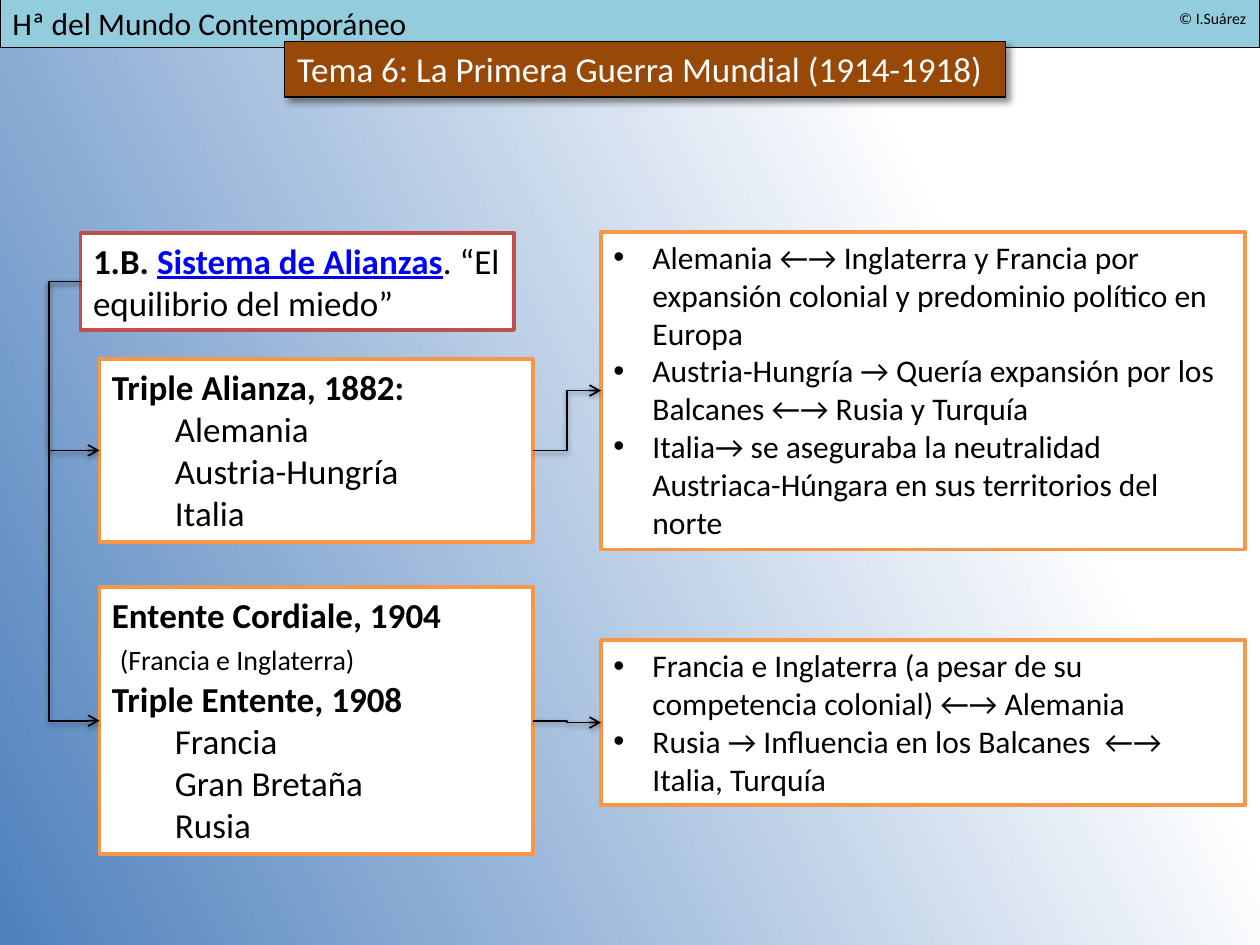
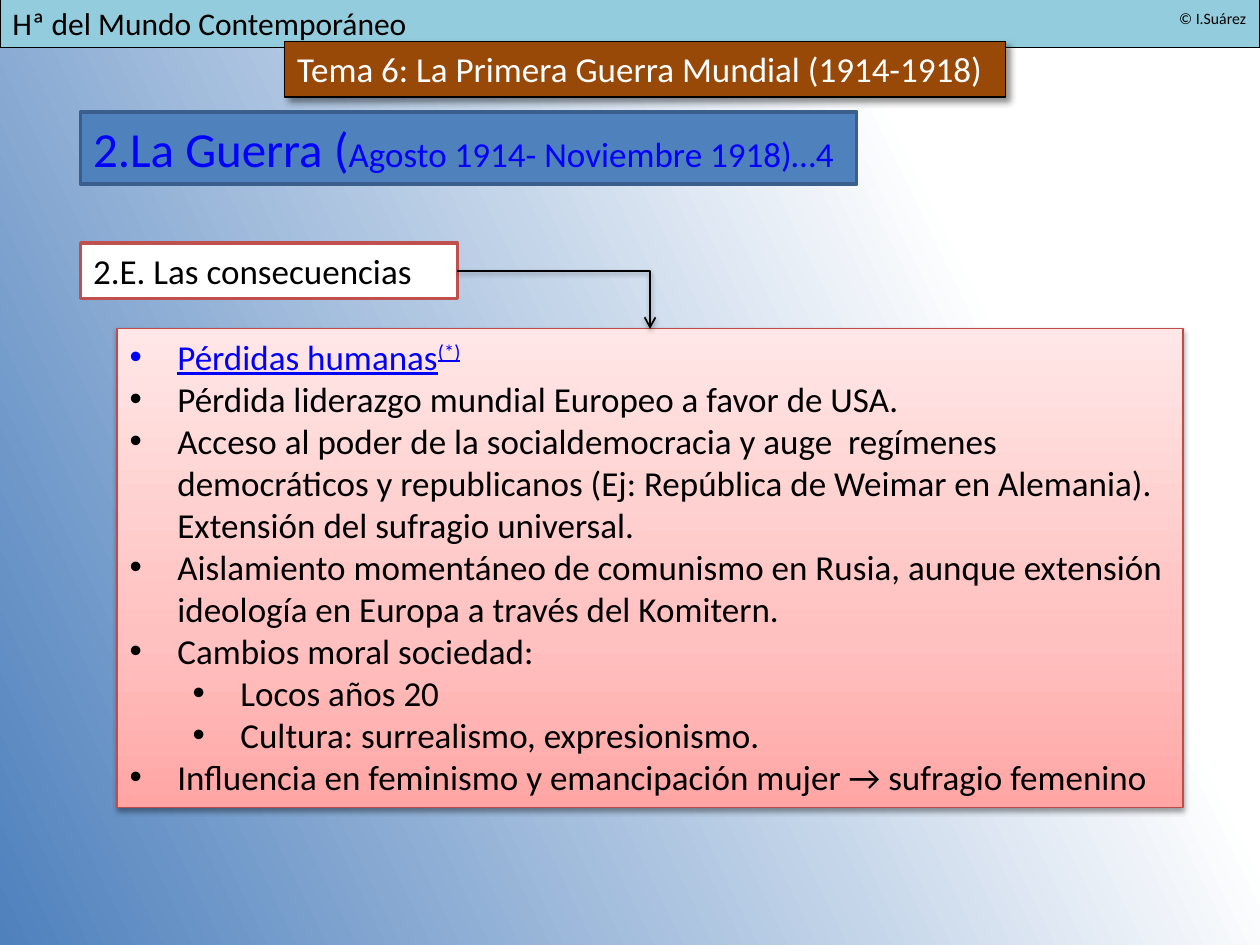
from lxml.etree import SubElement
from pptx import Presentation
from pptx.dml.color import RGBColor
from pptx.enum.shapes import MSO_CONNECTOR, MSO_SHAPE
from pptx.enum.text import MSO_ANCHOR, MSO_AUTO_SIZE, PP_ALIGN
from pptx.oxml.ns import qn
from pptx.util import Pt

PX = 9144
BLACK, WHITE, BLUE = "000000", "FFFFFF", "0000FF"
RED, ORANGE = "C0504D", "F79646"
rgb = RGBColor.from_string
INDENTS = {
    "plain": (0, 0, 0),
    "member": (1, 50, 0),
    "cause": (0, 31, -31),
    "result": (0, 38, -38),
    "detail": (1, 88, -38),
}


def write(p, text, size=20, color=BLACK, bold=False, underline=False, raised=False):
    r = p.add_run()
    r.text = text
    f = r.font
    f.name, f.size, f.bold, f.underline = "Calibri", Pt(size), bold, underline
    f.color.rgb = rgb(color)
    if raised:
        r._r.get_or_add_rPr().set("baseline", "30000")


def box(s, place, paragraphs, fill=WHITE, line=ORANGE, weight=2, wrap=True, **fmt):
    place = [n * PX for n in place]
    if fill:
        sp = s.shapes.add_shape(MSO_SHAPE.RECTANGLE, *place)
        sp.shadow.inherit = False
        sp.fill.solid()
        sp.fill.fore_color.rgb = rgb(fill)
        sp.line.color.rgb = rgb(line)
        sp.line.width = Pt(weight)
    else:
        sp = s.shapes.add_textbox(*place)
    tf = sp.text_frame
    tf.word_wrap = wrap
    tf.auto_size = MSO_AUTO_SIZE.SHAPE_TO_FIT_TEXT
    tf.vertical_anchor = MSO_ANCHOR.TOP
    for i, (style, *runs) in enumerate(paragraphs):
        p = tf.add_paragraph() if i else tf.paragraphs[0]
        p.alignment = PP_ALIGN.LEFT
        p.level, margin, indent = INDENTS[style]
        pPr = p._p.get_or_add_pPr()
        pPr.set("marL", str(margin * PX))
        pPr.set("indent", str(indent * PX))
        if indent:
            SubElement(pPr, qn("a:buFont"), typeface="Arial")
            SubElement(pPr, qn("a:buChar"), char="•")
        for text, own in runs:
            write(p, text, **{**fmt, **own})
    return sp


prs = Presentation()
prs.slide_width, prs.slide_height = 1000 * PX, 750 * PX
slides, gradients, shadows = [], [], []
SOFT = (38, 3.1, 1.6, 90)

for _ in range(2):
    s = prs.slides.add_slide(prs.slide_layouts[6])
    slides.append(s)
    gradients.append((s.background.fill, s._element, 26,
                      [(0, "4F81BD", 75), (76, WHITE, 100)]))
    box(s, (0, -2, 1000, 40), [("plain", ("Hª del Mundo Contemporáneo", {}))],
        fill="93CDDD", line=BLACK, weight=0.75, size=18)
    box(s, (926, 2, 74, 25), [("plain", ("© I.Suárez", {}))],
        fill=None, wrap=False, size=9)
    topic = box(s, (226, 33, 572, 44),
                [("plain", ("Tema 6: La Primera Guerra Mundial (1914-1918)", {}))],
                fill="984807", line=BLACK, weight=0.75, wrap=False, color=WHITE)
    shadows.append((topic, 43, 4, 3, 45))

alliances, war = slides
bold = {"bold": True}

system = box(alliances, (64, 185, 344, 77), [
    ("plain", ("1.B. ", bold),
     ("Sistema de Alianzas", {"bold": True, "color": BLUE, "underline": True}),
     (". “El equilibrio del miedo”", {})),
], line=RED)
alliance_causes = box(alliances, (477, 184, 511, 252), [("cause", (t, {})) for t in (
    "Alemania ←→ Inglaterra y Francia por expansión colonial y predominio político en Europa",
    "Austria-Hungría → Quería expansión por los Balcanes ←→ Rusia y Turquía",
    "Italia→ se aseguraba la neutralidad Austriaca-Húngara en sus territorios del norte",
)], size=18)
alliance = box(alliances, (79, 285, 344, 145), [
    ("plain", ("Triple Alianza, 1882:", bold)),
    *[("member", (t, {})) for t in ("Alemania", "Austria-Hungría", "Italia")],
])
entente_causes = box(alliances, (477, 508, 511, 131), [("cause", (t, {})) for t in (
    "Francia e Inglaterra (a pesar de su competencia colonial) ←→ Alemania",
    "Rusia → Influencia en los Balcanes  ←→ Italia, Turquía",
)], size=18)
entente = box(alliances, (79, 466, 344, 212), [
    ("plain", ("Entente Cordiale, 1904", bold)),
    ("plain", (" ", bold), ("(Francia e Inglaterra)", {"size": 16})),
    ("plain", ("Triple Entente, 1908", bold)),
    *[("member", (t, {})) for t in ("Francia", "Gran Bretaña", "Rusia")],
])

box(war, (64, 89, 616, 57), [
    ("plain", ("2.La Guerra (", {"size": 28}), ("Agosto 1914- Noviembre 1918)…4", {})),
], fill="4F81BD", line="3A5F8C", wrap=False, color=BLUE)
heading = box(war, (64, 193, 299, 44), [("plain", ("2.E. Las consecuencias", {}))], line=RED)
link = {"color": BLUE, "underline": True}
results = box(war, (93, 261, 846, 380), [
    ("result", ("Pérdidas humanas", link), ("(*)", {**link, "raised": True})),
    *[(style, (t, {})) for style, t in (
        ("result", "Pérdida liderazgo mundial Europeo a favor de USA."),
        ("result", "Acceso al poder de la socialdemocracia y auge  regímenes democráticos y "
                   "republicanos (Ej: República de Weimar en Alemania). Extensión del sufragio universal."),
        ("result", "Aislamiento momentáneo de comunismo en Rusia, aunque extensión ideología "
                   "en Europa a través del Komitern."),
        ("result", "Cambios moral sociedad:"),
        ("detail", "Locos años 20"),
        ("detail", "Cultura: surrealismo, expresionismo."),
        ("result", "Influencia en feminismo y emancipación mujer → sufragio femenino"),
    )],
], line="BF4C48", weight=0.75)
gradients.append((results.fill, results._element, 90,
                  [(0, "FFA6A5", 100), (35, "FFC0BF", 100), (100, "FFE7E7", 100)]))
shadows.append((results, *SOFT))

for s, start, side, end, end_side, kind, bend in (
    (alliances, system, 1, alliance, 1, "bentConnector3", -169200),
    (alliances, system, 1, entente, 1, "bentConnector3", -169200),
    (alliances, alliance, 3, alliance_causes, 1, "bentConnector3", 50000),
    (alliances, entente, 3, entente_causes, 1, "bentConnector3", 50000),
    (war, heading, 3, results, 0, "bentConnector2", None),
):
    c = s.shapes.add_connector(MSO_CONNECTOR.ELBOW, 0, 0, 0, 0)
    c.begin_connect(start, side)
    c.end_connect(end, end_side)
    c.line.color.rgb = rgb(BLACK)
    c.line.width = Pt(1)
    SubElement(c.line._get_or_add_ln(), qn("a:tailEnd"), type="arrow")
    geom = c._element.spPr.find(qn("a:prstGeom"))
    geom.set("prst", kind)
    if bend:
        SubElement(geom.find(qn("a:avLst")), qn("a:gd"), name="adj1", fmla=f"val {bend}")
    SubElement(c._element.spPr, qn("a:effectLst"))
    shadows.append((c, *SOFT))

for fill, element, angle, stops in gradients:
    fill.gradient()
    fill.gradient_angle = angle
    gs_list = element.find(".//" + qn("a:gsLst"))
    for gs in list(gs_list):
        gs_list.remove(gs)
    for position, color, alpha in stops:
        gs = SubElement(gs_list, qn("a:gs"), pos=str(position * 1000))
        clr = SubElement(gs, qn("a:srgbClr"), val=color)
        if alpha < 100:
            SubElement(clr, qn("a:alpha"), val=str(alpha * 1000))

for sp, alpha, blur, distance, angle in shadows:
    effects = sp._element.spPr.find(qn("a:effectLst"))
    shadow = SubElement(effects, qn("a:outerShdw"), blurRad=str(Pt(blur)),
                        dist=str(Pt(distance)), dir=str(angle * 60000), rotWithShape="0")
    clr = SubElement(shadow, qn("a:srgbClr"), val=BLACK)
    SubElement(clr, qn("a:alpha"), val=str(alpha * 1000))

prs.save("out.pptx")
